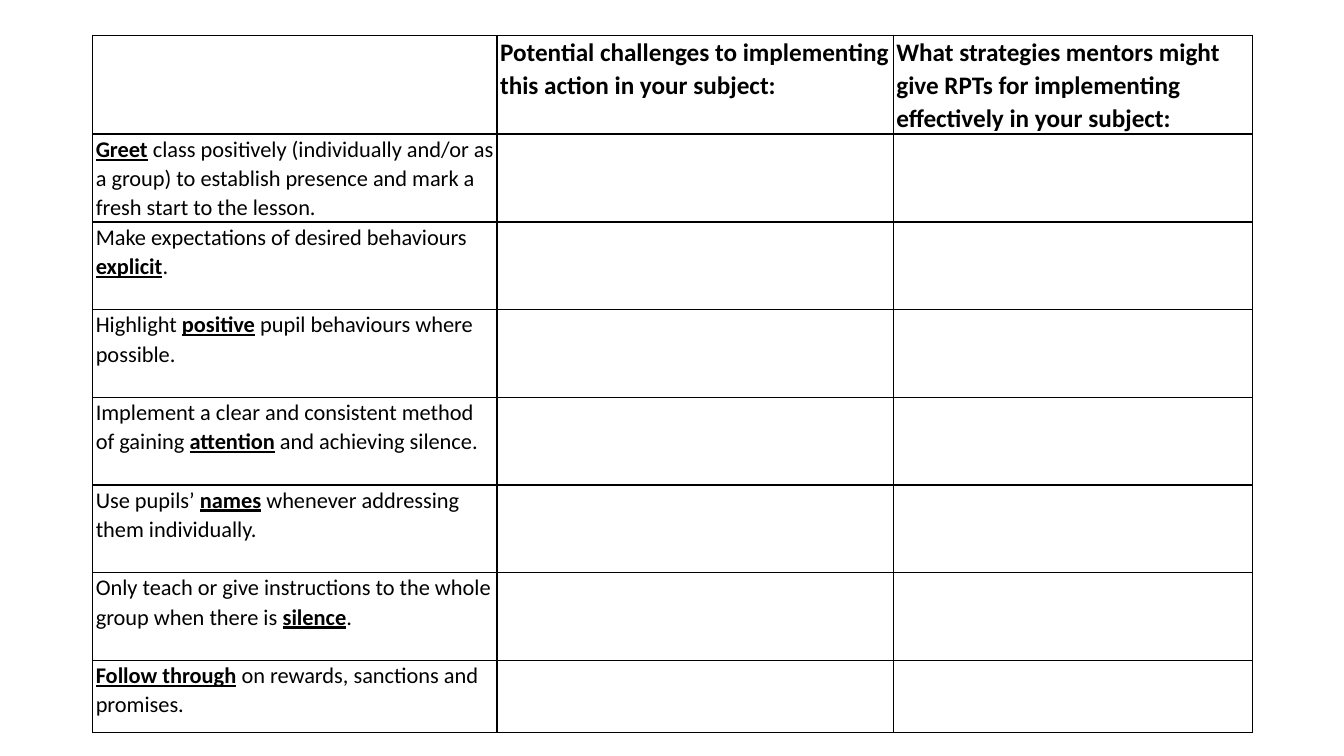
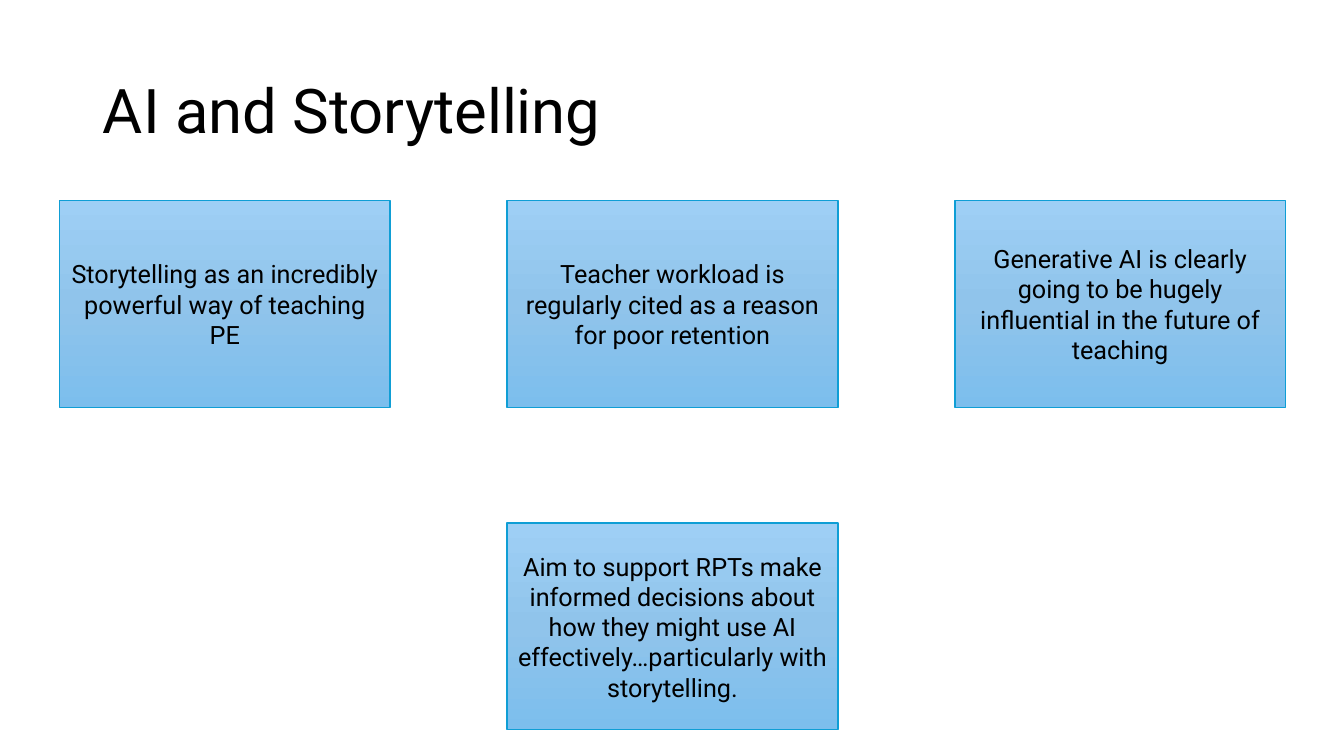
import pptx
import pptx.util
import pptx.dml.color
import pptx.enum.shapes
import pptx.enum.text
import pptx.oxml
import pptx.oxml.ns
import copy

PX = 9144
BLACK = pptx.dml.color.RGBColor(0x00, 0x00, 0x00)
WHITE = pptx.dml.color.RGBColor(0xFF, 0xFF, 0xFF)
BORDER_BLUE = pptx.dml.color.RGBColor(0x0F, 0x9E, 0xD5)
CARD_TOP = pptx.dml.color.RGBColor(0x9E, 0xCF, 0xF5)
CARD_MIDDLE = pptx.dml.color.RGBColor(0x90, 0xC4, 0xEB)
CARD_BOTTOM = pptx.dml.color.RGBColor(0x7C, 0xBE, 0xED)
TABLE_FONT = "Calibri"
SLIDE_FONT = "Roboto"


def add_span(para, text, font, size, bold=False, underline=False):
    span = para.add_run()
    span.text = text
    span.font.name = font
    span.font.size = pptx.util.Pt(size)
    span.font.bold = bold
    span.font.underline = underline
    span.font.color.rgb = BLACK


def add_borders(cell):
    properties = cell._tc.get_or_add_tcPr()
    for side in ("lnL", "lnR", "lnT", "lnB"):
        properties.append(pptx.oxml.parse_xml(
            f'<a:{side} {pptx.oxml.ns.nsdecls("a")} w="12700"><a:solidFill>'
            f'<a:srgbClr val="{BLACK}"/></a:solidFill></a:{side}>'))


deck = pptx.Presentation()
deck.slide_width = 1333 * PX
deck.slide_height = 750 * PX

page = deck.slides.add_slide(deck.slide_layouts[6])
headings = [
    "",
    "Potential challenges to implementing this action in your subject:",
    "What strategies mentors might give RPTs for implementing effectively in your subject:",
]
actions = [
    ("", "Greet", " class positively (individually and/or as a group) to establish presence "
     "and mark a fresh start to the lesson."),
    ("Make expectations of desired behaviours ", "explicit", "."),
    ("Highlight ", "positive", " pupil behaviours where possible."),
    ("Implement a clear and consistent method of gaining ", "attention", " and achieving silence."),
    ("Use pupils’ ", "names", " whenever addressing them individually."),
    ("Only teach or give instructions to the whole group when there is ", "silence", "."),
    ("", "Follow through", " on rewards, sanctions and promises."),
]
column_widths = [401, 393, 356]
row_heights = [98] + [87] * 6 + [72]
table = page.shapes.add_table(
    len(row_heights), len(column_widths), 92 * PX, 35 * PX,
    sum(column_widths) * PX, sum(row_heights) * PX).table
table.first_row = False
table.horz_banding = False
for column, width in zip(table.columns, column_widths):
    column.width = width * PX
for row, height in zip(table.rows, row_heights):
    row.height = height * PX

for cell in table.iter_cells():
    cell.margin_left = cell.margin_right = 3 * PX
    cell.margin_top = cell.margin_bottom = 0
    add_borders(cell)
    cell.fill.solid()
    cell.fill.fore_color.rgb = WHITE
    para = cell.text_frame.paragraphs[0]
    para.line_spacing = 1.07
    para.space_after = pptx.util.Pt(8)

for index, heading in enumerate(headings):
    if heading:
        add_span(table.cell(0, index).text_frame.paragraphs[0], heading, TABLE_FONT, 18, bold=True)
for index, (before, keyword, after) in enumerate(actions, 1):
    para = table.cell(index, 0).text_frame.paragraphs[0]
    if before:
        add_span(para, before, TABLE_FONT, 16)
    add_span(para, keyword, TABLE_FONT, 16, bold=True, underline=True)
    add_span(para, after, TABLE_FONT, 16)

page = deck.slides.add_slide(deck.slide_layouts[5])
title = page.shapes.title
title.left, title.top, title.width, title.height = 92 * PX, 40 * PX, 1150 * PX, 145 * PX
title.text_frame.vertical_anchor = pptx.enum.text.MSO_ANCHOR.MIDDLE
para = title.text_frame.paragraphs[0]
para.alignment = pptx.enum.text.PP_ALIGN.LEFT
para.line_spacing = 0.9
add_span(para, "AI and Storytelling", SLIDE_FONT, 44)

cards = [
    (0, 0, "Storytelling as an incredibly powerful way of teaching PE"),
    (1, 0, "Teacher workload is regularly cited as a reason for poor retention"),
    (2, 0, "Generative AI is clearly going to be hugely influential in the future of teaching"),
    (1, 1, "Aim to support RPTs make informed decisions about how they might use AI "
     "effectively…particularly with storytelling."),
]
for column, row, text in cards:
    box = page.shapes.add_shape(
        pptx.enum.shapes.MSO_SHAPE.RECTANGLE,
        (59 + 444 * column) * PX, (199 + 320 * row) * PX, 328 * PX, 205 * PX)
    box.shadow.inherit = False
    box.fill.gradient()
    box.fill.gradient_angle = 270
    stop_list = box._element.spPr.find(".//" + pptx.oxml.ns.qn("a:gsLst"))
    stop_list.insert(1, copy.deepcopy(stop_list[0]))
    for stop, position, color in zip(
            box.fill.gradient_stops, (0, 0.5, 1), (CARD_TOP, CARD_MIDDLE, CARD_BOTTOM)):
        stop.position = position
        stop.color.rgb = color
    box.line.color.rgb = BORDER_BLUE
    box.line.width = pptx.util.Pt(1)
    box.text_frame.word_wrap = True
    box.text_frame.vertical_anchor = pptx.enum.text.MSO_ANCHOR.MIDDLE
    para = box.text_frame.paragraphs[0]
    para.alignment = pptx.enum.text.PP_ALIGN.CENTER
    add_span(para, text, SLIDE_FONT, 18)

deck.save("out.pptx")
